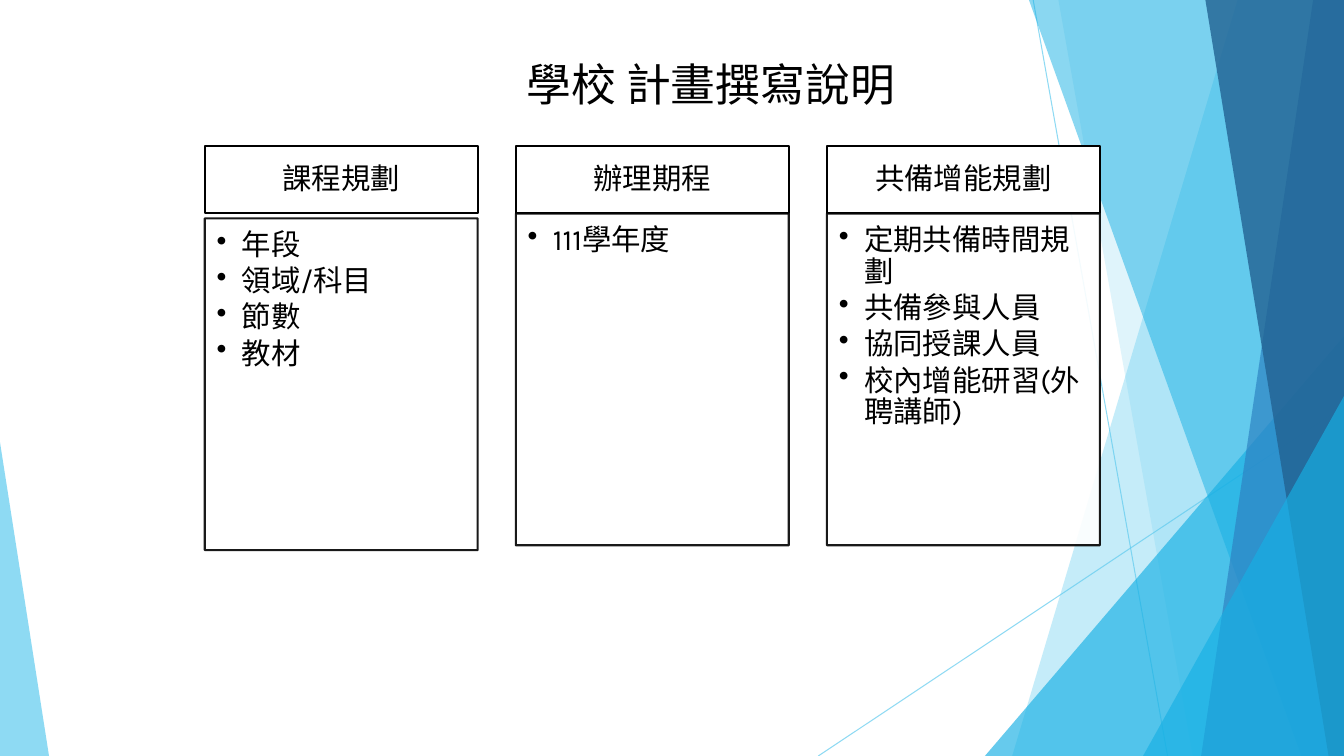
import pptx
import pptx.util
import pptx.dml.color
import pptx.enum.shapes
import pptx.enum.text
import lxml.etree

Pt = pptx.util.Pt
Shape = pptx.enum.shapes.MSO_SHAPE
Align = pptx.enum.text.PP_ALIGN
Anchor = pptx.enum.text.MSO_ANCHOR
NS = "{http://schemas.openxmlformats.org/drawingml/2006/main}"


def paint(fill, color, alpha=100):
    fill.solid()
    fill.fore_color.rgb = pptx.dml.color.RGBColor.from_string(color)
    if alpha < 100:
        tone = next(fill._xPr.iter(NS + "srgbClr"))
        lxml.etree.SubElement(tone, NS + "alpha", val=str(alpha * 1000))


def write(par, text, font, size):
    par.text = text
    par.font.name = font
    par.font.size = Pt(size)
    paint(par.font.fill, "000000")


deck = pptx.Presentation()
deck.slide_width = Pt(960)
deck.slide_height = Pt(540)
slide = deck.slides.add_slide(deck.slide_layouts[5])
shapes = slide.shapes

for x1, y1, x2, y2 in [(738, 0, 834, 540), (960, 290, 584.5, 540)]:
    ray = shapes.add_connector(
        pptx.enum.shapes.MSO_CONNECTOR.STRAIGHT, Pt(x1), Pt(y1), Pt(x2), Pt(y2))
    ray.line.width = Pt(0.75)
    paint(ray.line.fill, "5FCBEF", 70)
    lxml.etree.SubElement(ray._element.spPr, NS + "effectLst")

facets = [
    ("band", (884, 723), "5FCBEF", 36),
    ("band", (756, 852), "5FCBEF", 20),
    ("peak", (703.5, 240, 256.5, 1), "17B0E4", 66),
    ("band", (735, 929.5), "17B0E4", 50),
    ("band", (938, 858), "2E83C3", 70),
    ("band", (861, 949), "226292", 80),
    ("peak", (816.5, 283, 143.5, 1), "17B0E4", 66),
    ("peak", (0, 316, 35, 0), "5FCBEF", 70),
]
for kind, place, color, alpha in facets:
    if kind == "band":
        top, base = place
        pen = shapes.build_freeform(Pt(top), Pt(0))
        pen.add_line_segments(
            [(Pt(960), Pt(0)), (Pt(960), Pt(540)), (Pt(base), Pt(540))], close=True)
        facet = pen.convert_to_shape()
    else:
        left, top, width, tip = place
        facet = shapes.add_shape(
            Shape.ISOSCELES_TRIANGLE, Pt(left), Pt(top), Pt(width), Pt(540 - top))
        facet.adjustments[0] = tip
    facet.shadow.inherit = False
    facet.line.fill.background()
    paint(facet.fill, color, alpha)

title = shapes.title
title.left, title.top, title.width, title.height = Pt(354), Pt(37), Pt(307.5), Pt(46)
title.text_frame.vertical_anchor = Anchor.MIDDLE
head = title.text_frame.paragraphs[0]
write(head, "學校 計畫撰寫說明", "Noto Sans CJK SC", 32)
head.alignment = Align.CENTER

columns = [
    ("課程規劃", 156, ["年段", "領域/科目", "節數", "教材"]),
    ("辦理期程", 152.5, ["111學年度"]),
    ("共備增能規劃", 152.5,
     ["定期共備時間規劃", "共備參與人員", "協同授課人員", "校內增能研習(外聘講師)"]),
]
for col, (name, start, items) in enumerate(columns):
    left = 146.25 + 222.2 * col
    parts = [
        (104.5, 47.5, [name], "Calibri", 100, (11.5, 6.5, 11.5, 6.5)),
        (start, 237, items, "Karla", 90, (8.5, 8.5, 11.5, 13)),
    ]
    for top, height, lines, font, alpha, inset in parts:
        box = shapes.add_shape(
            Shape.RECTANGLE, Pt(left), Pt(top), Pt(195), Pt(height))
        box.shadow.inherit = False
        paint(box.fill, "FFFFFF", alpha)
        paint(box.line.fill, "000000", alpha)
        box.line.width = Pt(1.5)
        frame = box.text_frame
        frame.word_wrap = True
        (frame.margin_left, frame.margin_top,
         frame.margin_right, frame.margin_bottom) = map(Pt, inset)
        listed = lines is items
        frame.vertical_anchor = Anchor.TOP if listed else Anchor.MIDDLE
        for row, text in enumerate(lines):
            par = frame.add_paragraph() if row else frame.paragraphs[0]
            par.alignment = Align.LEFT if listed else Align.CENTER
            par.line_spacing = 0.9
            par.space_after = Pt(3.15 if listed else 7.35)
            if listed:
                props = par._p.get_or_add_pPr()
                props.set("marL", str(Pt(18)))
                props.set("indent", str(Pt(-18)))
                lxml.etree.SubElement(props, NS + "buChar", char="•")
            write(par, text, font, 21)

deck.save("out.pptx")
